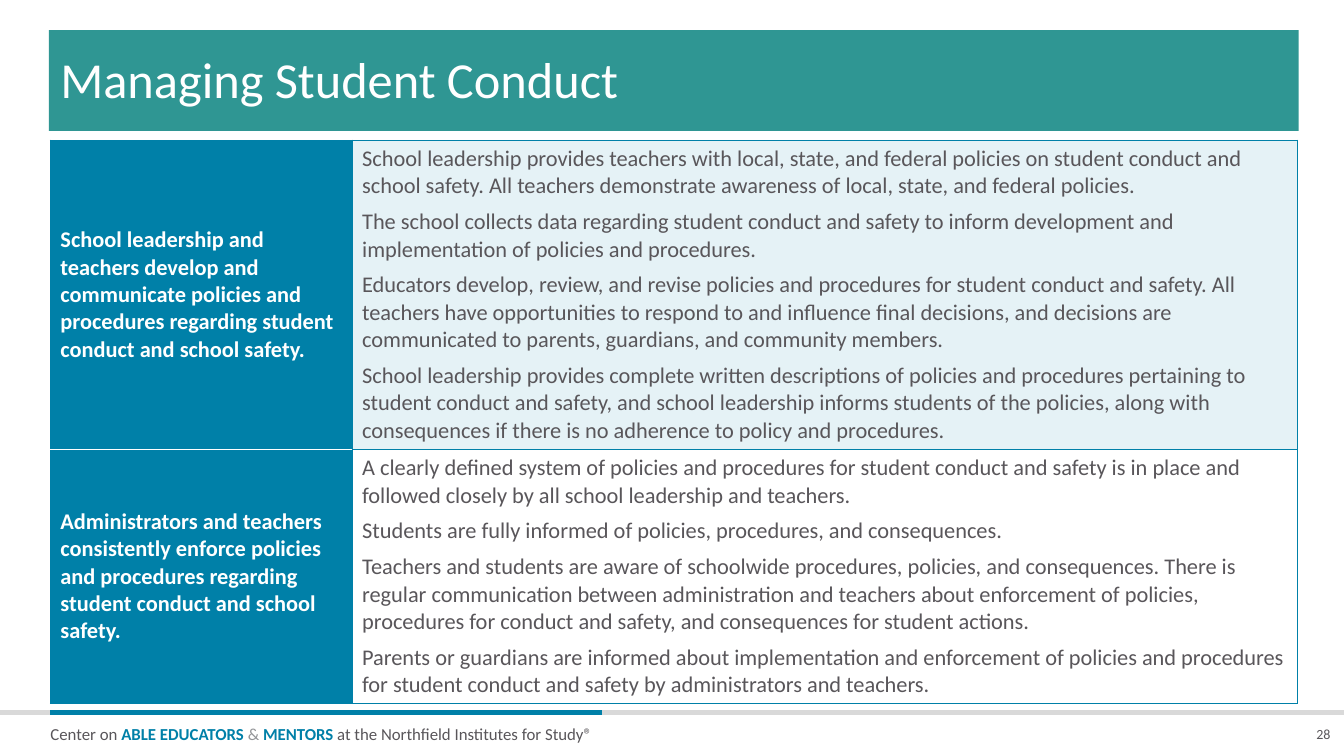
from dataclasses import dataclass
from typing import Any

from lxml.etree import SubElement
from pptx import Presentation
from pptx.dml.color import RGBColor
from pptx.enum.shapes import MSO_CONNECTOR, MSO_SHAPE
from pptx.enum.text import MSO_ANCHOR, PP_ALIGN
from pptx.oxml.ns import qn
from pptx.util import Pt


@dataclass(frozen=True)
class Theme:
    font: str = "Calibri"
    blue: str = "0080A8"
    teal: str = "2F9693"
    pale: str = "E5F2F6"
    white: str = "FFFFFF"
    ink: str = "59565A"
    gray: str = "939598"
    rule: str = "D9D9D9"
    title: float = 36
    body: float = 16
    foot: float = 12
    page: float = 10


THEME = Theme()


@dataclass(frozen=True)
class Box:
    left: float
    top: float
    width: float
    height: float

    def place(self) -> tuple[Pt, Pt, Pt, Pt]:
        return Pt(self.left), Pt(self.top), Pt(self.width), Pt(self.height)


@dataclass(frozen=True)
class Run:
    text: str
    color: str
    bold: bool = False


@dataclass(frozen=True)
class Label:
    box: Box
    runs: tuple[Run, ...]
    size: float
    frame: dict[str, Any]
    para: dict[str, Any]


@dataclass(frozen=True)
class Rule:
    start: float
    end: float
    color: str


@dataclass(frozen=True)
class Topic:
    name: str
    height: float
    fill: str
    points: tuple[str, ...]


PANELS = (
    (Box(0, 509, 960, 31), THEME.white),
    (Box(34.9, 21.6, 892.8, 72), THEME.teal),
)
RULES = (Rule(0, 960, THEME.rule), Rule(36, 430, THEME.blue))
RULE_TOP = 509
FLUSH = {"margin_left": 0, "margin_top": 0, "margin_right": 0, "margin_bottom": 0}
LABELS = (
    Label(
        Box(36, 0, 892.8, 78.5),
        (Run("Managing Student Conduct", THEME.white),),
        THEME.title,
        {**FLUSH, "margin_left": Pt(7.2), "word_wrap": True,
         "vertical_anchor": MSO_ANCHOR.BOTTOM},
        {"line_spacing": 0.9},
    ),
    Label(
        Box(36, 513.4, 394, 16.6),
        (
            Run("Center on ", THEME.ink),
            Run("ABLE EDUCATORS ", THEME.blue, True),
            Run("& ", THEME.gray),
            Run("MENTORS", THEME.blue, True),
            Run(" at the Northfield Institutes for Study®", THEME.ink),
        ),
        THEME.foot,
        {**FLUSH, "word_wrap": True},
        {"line_spacing": 1.25},
    ),
    Label(
        Box(938, 518.4, 12.4, 12.2),
        (Run("28", THEME.ink),),
        THEME.page,
        {**FLUSH, "word_wrap": False, "vertical_anchor": MSO_ANCHOR.BOTTOM},
        {"alignment": PP_ALIGN.RIGHT},
    ),
)
GRID = Box(36, 100.1, 891, 401)
COLUMNS = (215.5, 675.5)
TOPICS = (
    Topic(
        "School leadership and teachers develop and communicate policies and "
        "procedures regarding student conduct and school safety.",
        220, THEME.pale,
        (
            "School leadership provides teachers with local, state, and federal policies on "
            "student conduct and school safety. All teachers demonstrate awareness of local, "
            "state, and federal policies.",
            "The school collects data regarding student conduct and safety to inform "
            "development and implementation of policies and procedures.",
            "Educators develop, review, and revise policies and procedures for student conduct "
            "and safety. All teachers have opportunities to respond to and influence final "
            "decisions, and decisions are communicated to parents, guardians, and community "
            "members.",
            "School leadership provides complete written descriptions of policies and "
            "procedures pertaining to student conduct and safety, and school leadership "
            "informs students of the policies, along with consequences if there is no "
            "adherence to policy and procedures.",
        ),
    ),
    Topic(
        "Administrators and teachers consistently enforce policies and procedures "
        "regarding student conduct and school safety.",
        181, THEME.white,
        (
            "A clearly defined system of policies and procedures for student conduct and "
            "safety is in place and followed closely by all school leadership and teachers.",
            "Students are fully informed of policies, procedures, and consequences.",
            "Teachers and students are aware of schoolwide procedures, policies, and "
            "consequences. There is regular communication between administration and teachers "
            "about enforcement of policies, procedures for conduct and safety, and "
            "consequences for student actions.",
            "Parents or guardians are informed about implementation and enforcement of "
            "policies and procedures for student conduct and safety by administrators and "
            "teachers.",
        ),
    ),
)


def apply(target: Any, values: dict[str, Any]) -> None:
    for name, value in values.items():
        setattr(target, name, value)


def paint(fill: Any, color: str) -> None:
    fill.solid()
    fill.fore_color.rgb = RGBColor.from_string(color)


def write(para: Any, run: Run, size: float) -> None:
    part = para.add_run()
    part.text = run.text
    apply(part.font, {"name": THEME.font, "size": Pt(size), "bold": run.bold})
    part.font.color.rgb = RGBColor.from_string(run.color)


def draw_panel(slide: Any, box: Box, color: str) -> None:
    panel = slide.shapes.add_shape(MSO_SHAPE.RECTANGLE, *box.place())
    panel.shadow.inherit = False
    paint(panel.fill, color)
    panel.line.fill.background()


def draw_rule(slide: Any, rule: Rule) -> None:
    line = slide.shapes.add_connector(
        MSO_CONNECTOR.STRAIGHT, Pt(rule.start), Pt(RULE_TOP), Pt(rule.end), Pt(RULE_TOP))
    line.line.width = Pt(3)
    paint(line.line.fill, rule.color)
    SubElement(line.element.spPr, qn("a:effectLst"))


def draw_label(slide: Any, label: Label) -> None:
    frame = slide.shapes.add_textbox(*label.box.place()).text_frame
    apply(frame, label.frame)
    para = frame.paragraphs[0]
    apply(para, label.para)
    for run in label.runs:
        write(para, run, label.size)


def edge(cell: Any, top: str, bottom: str) -> None:
    """Outline a cell; the sides are always blue."""
    props = cell._tc.get_or_add_tcPr()
    for side, color in zip("LRTB", (THEME.blue, THEME.blue, top, bottom)):
        line = SubElement(props, qn(f"a:ln{side}"), w=str(Pt(0.75)))
        SubElement(SubElement(line, qn("a:solidFill")), qn("a:srgbClr"), val=color)


def fill_cell(cell: Any, runs: list[Run], color: str, gap: float) -> None:
    paint(cell.fill, color)
    cell.vertical_anchor = MSO_ANCHOR.MIDDLE
    frame = cell.text_frame
    for index, run in enumerate(runs):
        para = frame.add_paragraph() if index else frame.paragraphs[0]
        para.space_before = Pt(gap)
        write(para, run, THEME.body)


def draw_grid(slide: Any) -> None:
    table = slide.shapes.add_table(len(TOPICS), len(COLUMNS), *GRID.place()).table
    apply(table, {"first_row": False, "horz_banding": False})
    for column, width in zip(table.columns, COLUMNS):
        column.width = Pt(width)
    last = len(TOPICS) - 1
    for index, topic in enumerate(TOPICS):
        table.rows[index].height = Pt(topic.height)
        name, detail = table.cell(index, 0), table.cell(index, 1)
        edge(name, THEME.white if index else THEME.blue,
             THEME.white if index < last else THEME.blue)
        edge(detail, THEME.blue, THEME.blue)
        fill_cell(name, [Run(topic.name, THEME.white, True)], THEME.blue, 0)
        fill_cell(detail, [Run(text, THEME.ink) for text in topic.points], topic.fill, 6)


def main() -> None:
    deck = Presentation()
    apply(deck, {"slide_width": Pt(960), "slide_height": Pt(540)})
    slide = deck.slides.add_slide(deck.slide_layouts[6])
    for box, color in PANELS:
        draw_panel(slide, box, color)
    for rule in RULES:
        draw_rule(slide, rule)
    draw_grid(slide)
    for label in LABELS:
        draw_label(slide, label)
    deck.save("out.pptx")


if __name__ == "__main__":
    main()
